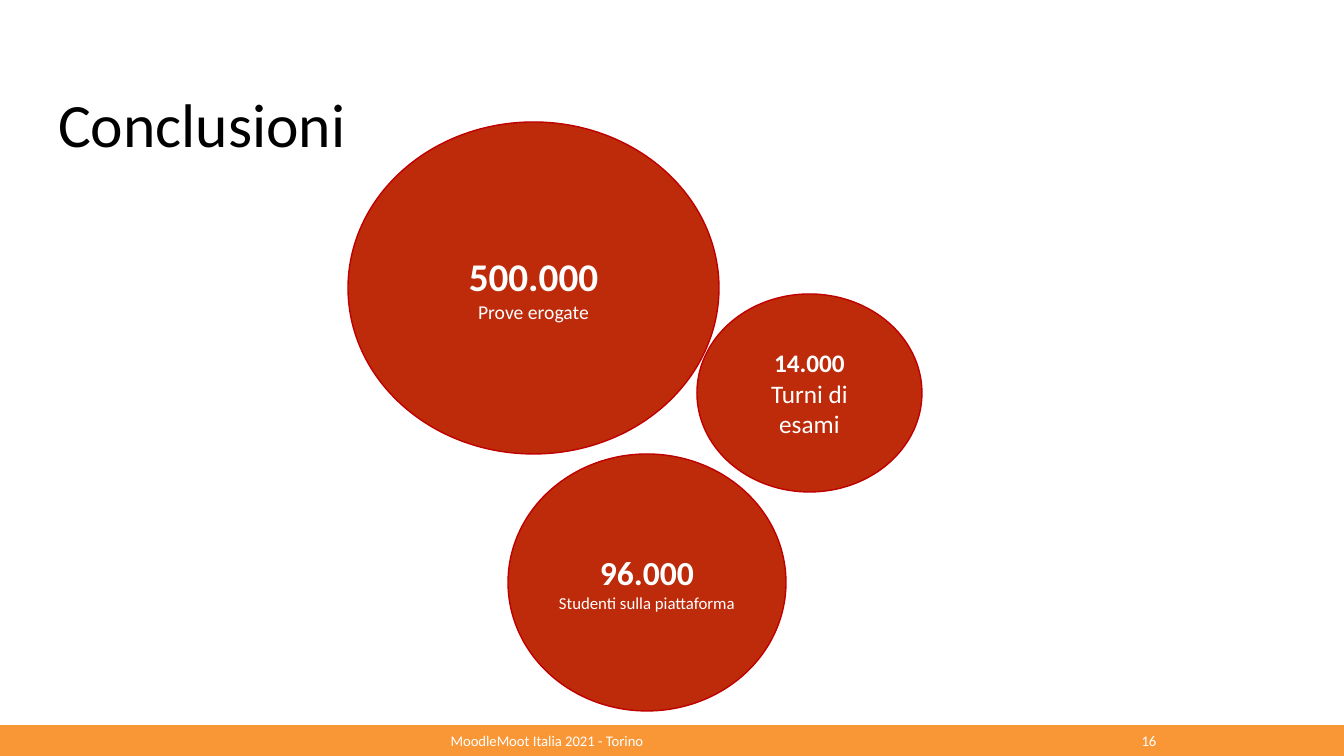
from lxml.etree import SubElement
from pptx import Presentation
from pptx.dml.color import RGBColor
from pptx.enum.shapes import MSO_SHAPE
from pptx.enum.text import MSO_ANCHOR, PP_ALIGN
from pptx.oxml.ns import qn
from pptx.util import Pt

PX = 12192000 / 1344
THEME = {
    "font": "Calibri",
    "ink": RGBColor(0x00, 0x00, 0x00),
    "white": RGBColor(0xFF, 0xFF, 0xFF),
    "footer": RGBColor(0xF9, 0x97, 0x37),
    "bubble": RGBColor(0xBD, 0x2B, 0x0B),
    "outline": RGBColor(0xC0, 0x00, 0x00),
    "title_size": 44,
    "footer_size": 10.5,
}


def px(length):
    return round(length * PX)


def add_text(paragraph, text, size, color, bold=False):
    run = paragraph.add_run()
    run.text = text
    run.font.name = THEME["font"]
    run.font.size = Pt(size)
    run.font.bold = bold
    run.font.color.rgb = color


deck = Presentation()
deck.slide_width, deck.slide_height = px(1344), px(756)
slide = deck.slides.add_slide(deck.slide_layouts[5])

# Footer bar: event and page number centred on tab stops
footer = slide.shapes.add_shape(MSO_SHAPE.RECTANGLE, 0, px(725), px(1344), px(31))
footer.shadow.inherit = False
footer.fill.solid()
footer.fill.fore_color.rgb = THEME["footer"]
footer.line.fill.background()
footer.text_frame.margin_left = footer.text_frame.margin_right = 0
footer.text_frame.vertical_anchor = MSO_ANCHOR.MIDDLE
footer_line = footer.text_frame.paragraphs[0]
footer_line.alignment = PP_ALIGN.LEFT
tab_stops = SubElement(footer_line._p.get_or_add_pPr(), qn("a:tabLst"))
for center in (547, 1149):
    SubElement(tab_stops, qn("a:tab"), pos=str(px(center)), algn="ctr")
add_text(footer_line, "\tMoodleMoot Italia 2021 - Torino\t16",
         THEME["footer_size"], THEME["white"])

# Title
title = slide.shapes.title
title.left, title.top, title.width, title.height = px(48), px(55), px(1159), px(146)
title.text_frame.word_wrap = True
title.text_frame.vertical_anchor = MSO_ANCHOR.MIDDLE
heading = title.text_frame.paragraphs[0]
heading.alignment = PP_ALIGN.LEFT
heading.line_spacing = 0.9
add_text(heading, "Conclusioni", THEME["title_size"], THEME["ink"])

# Bubbles: left, top, width, height, figure, figure size, label, label size
results = [
    (348, 122, 371, 332, "500.000", 28, "Prove erogate", 14),
    (508, 454, 278, 257, "96.000", 24, "Studenti sulla piattaforma", 12),
    (697, 294, 225, 198, "14.000", 18, "Turni di esami", 18),
]
for left, top, width, height, figure, figure_size, label, label_size in results:
    bubble = slide.shapes.add_shape(
        MSO_SHAPE.OVAL, px(left), px(top), px(width), px(height))
    bubble.shadow.inherit = False
    bubble.fill.solid()
    bubble.fill.fore_color.rgb = THEME["bubble"]
    bubble.line.color.rgb = THEME["outline"]
    bubble.line.width = Pt(1)
    caption = bubble.text_frame
    caption.word_wrap = True
    caption.margin_left = caption.margin_right = px(9)
    caption.vertical_anchor = MSO_ANCHOR.MIDDLE
    figure_line, label_line = caption.paragraphs[0], caption.add_paragraph()
    figure_line.alignment = label_line.alignment = PP_ALIGN.CENTER
    add_text(figure_line, figure, figure_size, THEME["white"], bold=True)
    add_text(label_line, label, label_size, THEME["white"])

deck.save("out.pptx")
